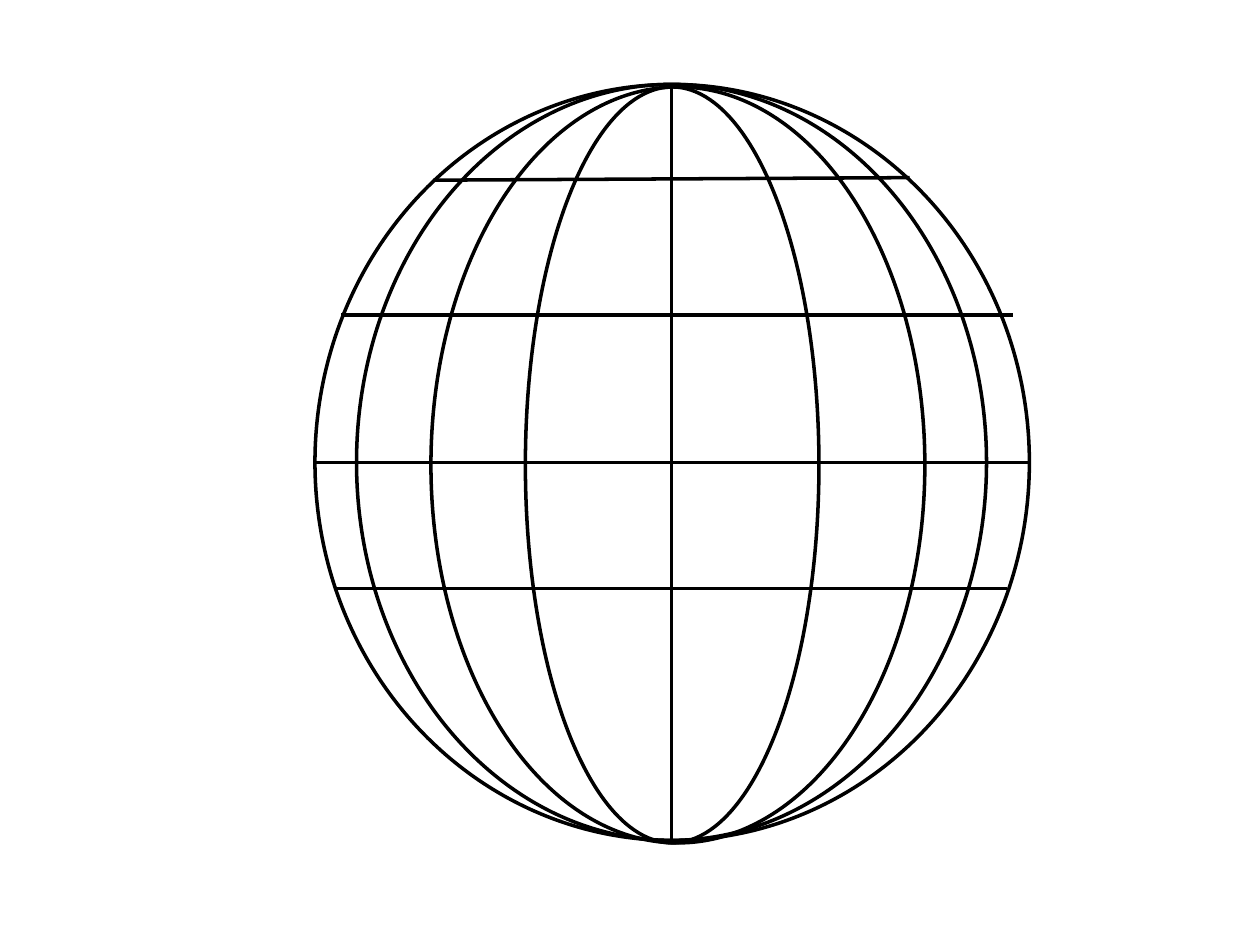
from dataclasses import dataclass

from lxml.etree import SubElement
from pptx import Presentation
from pptx.dml.color import RGBColor
from pptx.enum.shapes import MSO_CONNECTOR, MSO_SHAPE
from pptx.oxml.ns import qn
from pptx.util import Inches, Pt


@dataclass(frozen=True)
class Theme:
    """Colours and line sizes of the slide."""
    ink: RGBColor = RGBColor(0, 0, 0)
    paper: RGBColor = RGBColor(255, 255, 255)
    stroke: Pt = Pt(2)


@dataclass(frozen=True)
class Box:
    """Region of the slide in inches."""
    left: float
    top: float
    width: float
    height: float


THEME = Theme()
GLOBE = Box(2.5, 0.67, 5.67, 6)
MERIDIANS = [(0, 0, 5.67), (0.33, 0, 5), (0.92, 0.02, 3.92), (1.67, 0.02, 2.33)]
PARALLELS = [
    (0.94, 0.76, 4.72, 0.74),
    (0.21, 1.83, 5.54, 1.83),
    (0, 3, 5.67, 3),
    (0.16, 4, 5.49, 4),
]
AXIS = (2.83, 6, 2.83, 0.02)


def style_line(line):
    """Give a line the colour and width of the theme."""
    line.color.rgb = THEME.ink
    for name, value in {"width": THEME.stroke}.items():
        setattr(line, name, value)


def add_meridian(slide, box, offset_x, offset_y, width):
    """Add an open ellipse as tall as the globe."""
    shape = slide.shapes.add_shape(
        MSO_SHAPE.OVAL, Inches(box.left + offset_x), Inches(box.top + offset_y),
        Inches(width), Inches(box.height))
    shape.shadow.inherit = False
    shape.fill.background()
    style_line(shape.line)


def add_grid_line(slide, box, start_x, start_y, end_x, end_y):
    """Add a straight line between two points of the globe."""
    connector = slide.shapes.add_connector(
        MSO_CONNECTOR.STRAIGHT, Inches(box.left + start_x), Inches(box.top + start_y),
        Inches(box.left + end_x), Inches(box.top + end_y))
    style_line(connector.line)
    SubElement(connector._element.spPr, qn("a:effectLst"))


def add_globe(slide, box):
    """Draw the globe with its meridians, parallels and axis."""
    for meridian in MERIDIANS:
        add_meridian(slide, box, *meridian)
    for grid_line in [*PARALLELS, AXIS]:
        add_grid_line(slide, box, *grid_line)


def main():
    """Build and save the presentation."""
    presentation = Presentation()
    for name, value in {"slide_width": Inches(10), "slide_height": Inches(7.5)}.items():
        setattr(presentation, name, value)
    slide = presentation.slides.add_slide(presentation.slide_layouts[6])
    slide.background.fill.solid()
    slide.background.fill.fore_color.rgb = THEME.paper
    add_globe(slide, GLOBE)
    presentation.save("out.pptx")


if __name__ == "__main__":
    main()
